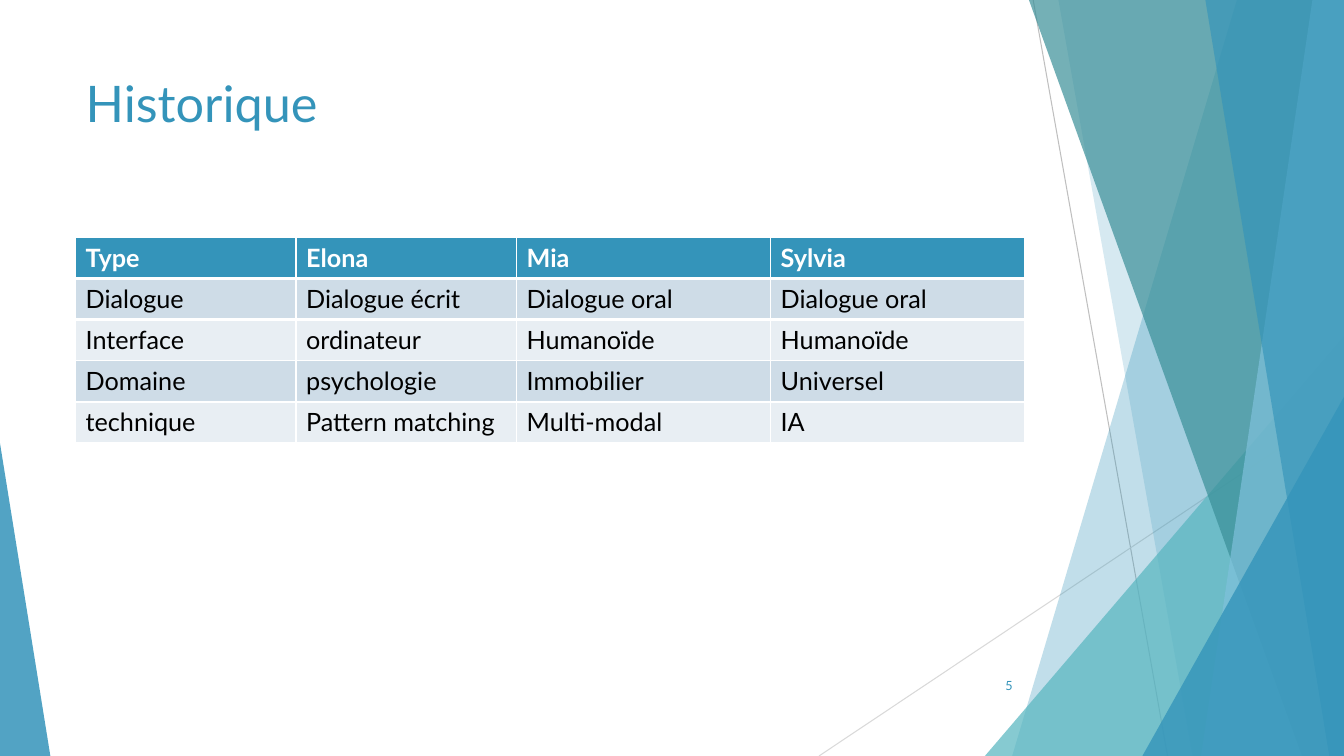
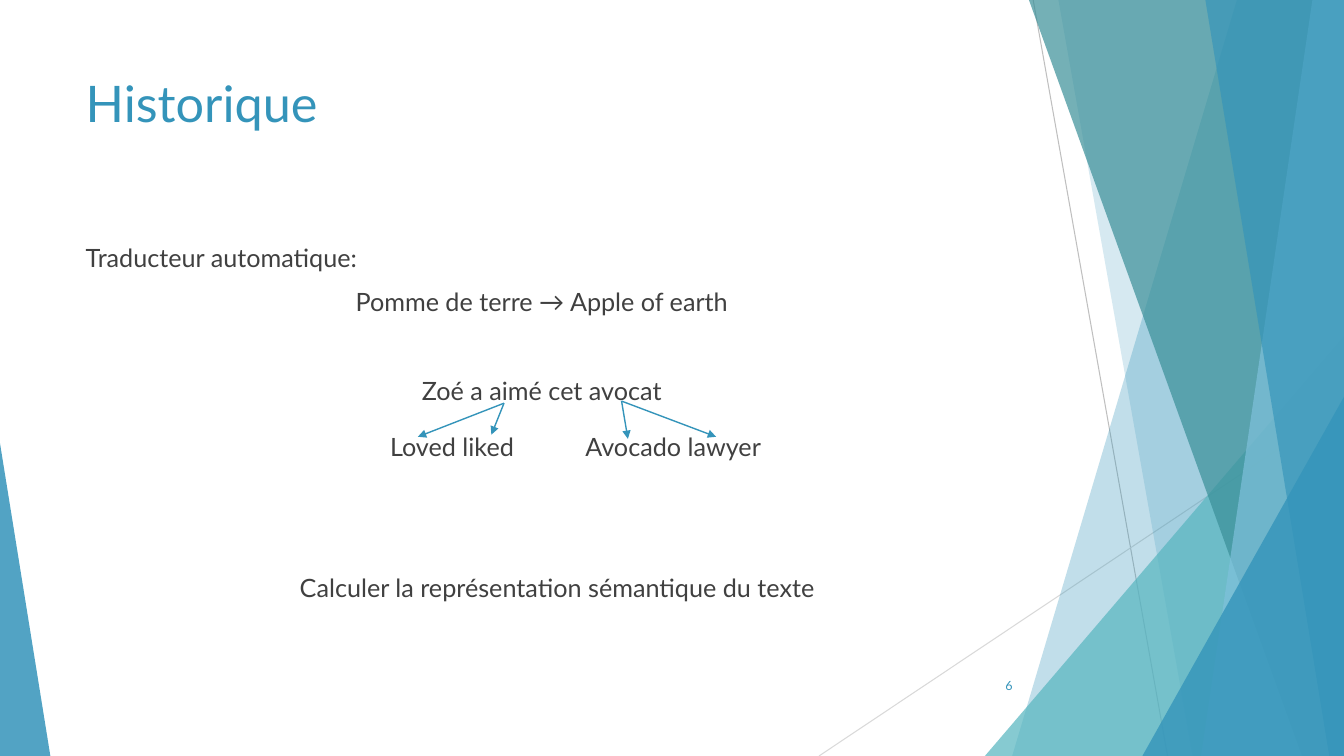
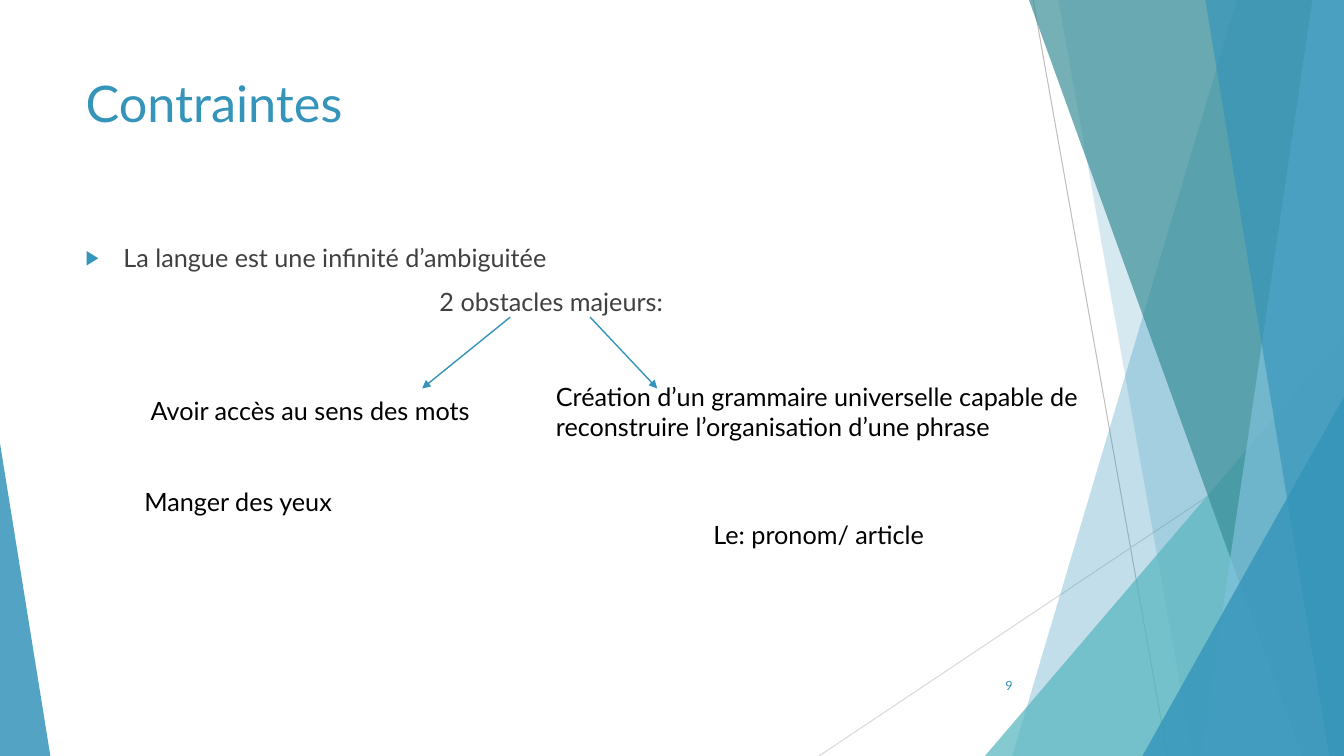
from lxml.etree import SubElement
from pptx import Presentation
from pptx.dml.color import RGBColor
from pptx.enum.shapes import MSO_CONNECTOR, MSO_SHAPE
from pptx.enum.text import MSO_ANCHOR, MSO_AUTO_SIZE, PP_ALIGN
from pptx.oxml.ns import qn
from pptx.util import Inches, Pt

BLUE, TEAL, SEA, SKY = "3494BA", "58B6C0", "3A8F98", "7FC1DB"
GREY, BLACK, WHITE = "404040", "000000", "FFFFFF"
FONT = "Lato"
rgb = RGBColor.from_string

prs = Presentation()
prs.slide_width, prs.slide_height = Inches(40 / 3), Inches(7.5)
COLS, ROWS = 640, 360  # square grid over the whole slide
u = prs.slide_width // COLS


def write(tf, text, size=18, color=GREY, bold=False, align=PP_ALIGN.LEFT,
          before=0, indent=0, bullet=False):
    """Add one formatted paragraph to a text frame; indent is in grid columns."""
    tf.word_wrap = True
    p = tf.add_paragraph() if tf.text else tf.paragraphs[0]
    p.alignment, p.space_before = align, Pt(before)
    r = p.add_run()
    r.text = text
    r.font.name, r.font.size, r.font.bold = FONT, Pt(size), bold
    r.font.color.rgb = rgb(color)
    pPr = p._p.get_or_add_pPr()
    pPr.set("marL", str(indent * u))
    pPr.set("indent", str(-indent * u if bullet else 0))
    if bullet:
        SubElement(SubElement(pPr, qn("a:buClr")), qn("a:srgbClr"), val=BLUE)
        SubElement(pPr, qn("a:buSzPct"), val="80000")
        SubElement(pPr, qn("a:buChar"), char="▶")
    else:
        SubElement(pPr, qn("a:buNone"))


def line(shapes, x1, y1, x2, y2, color=BLUE, width=1, arrow=True):
    cxn = shapes.add_connector(MSO_CONNECTOR.STRAIGHT, x1 * u, y1 * u, x2 * u, y2 * u)
    cxn.line.color.rgb, cxn.line.width = rgb(color), Pt(width)
    spPr = cxn.element.spPr
    if arrow:
        SubElement(spPr.find(qn("a:ln")), qn("a:tailEnd"), type="triangle")
    SubElement(spPr, qn("a:effectLst"))


# Slides with title and number
slides = []
for title, number, layout in (("Historique", "5", 5), ("Historique", "6", 1),
                              ("Contraintes", "9", 1)):
    s = prs.slides.add_slide(prs.slide_layouts[layout])
    sp = s.shapes.title
    sp.left, sp.top, sp.width, sp.height = 36 * u, 32 * u, 451 * u, 69 * u
    sp.text_frame.auto_size = MSO_AUTO_SIZE.NONE
    sp.text_frame.vertical_anchor = MSO_ANCHOR.TOP
    write(sp.text_frame, title, size=36, color=BLUE)
    tf = s.shapes.add_textbox(451 * u, 317 * u, 36 * u, 19 * u).text_frame
    tf.vertical_anchor = MSO_ANCHOR.MIDDLE
    write(tf, number, size=9, color=BLUE, align=PP_ALIGN.RIGHT)
    slides.append(s)
table_slide, translation_slide, limits_slide = slides

# Decoration, drawn once and moved to the master
group = table_slide.shapes.add_group_shape()
line(group.shapes, 492, 0, 556, ROWS, "BFBFBF", 0.75, arrow=False)
line(group.shapes, COLS, 193, 390, ROWS, "D9D9D9", 0.75, arrow=False)
# Bands: left edge at top and bottom. Triangles: left, top, width, apex.
for place, color, alpha in (
    ((589, 482), BLUE, 30),
    ((504, 568), BLUE, 20),
    ((469, 160, 171, 1), TEAL, 72),
    ((490, 620), SEA, 70),
    ((625, 572), SKY, 70),
    ((574, 633), BLUE, 65),
    ((544, 189, 96, 1), BLUE, 80),
    ((0, 211, 24, 0), BLUE, 85),
):
    if len(place) == 2:
        top_x, bottom_x = place
        outline = group.shapes.build_freeform(top_x, 0, scale=u)
        outline.add_line_segments([(COLS, 0), (COLS, ROWS), (bottom_x, ROWS)])
        sp = outline.convert_to_shape()
    else:
        x, y, w, apex = place
        sp = group.shapes.add_shape(MSO_SHAPE.ISOSCELES_TRIANGLE,
                                    x * u, y * u, w * u, (ROWS - y) * u)
        sp.adjustments[0] = apex
    sp.shadow.inherit = False
    sp.line.fill.background()
    sp.fill.solid()
    sp.fill.fore_color.rgb = rgb(color)
    SubElement(sp.element.spPr.find(".//" + qn("a:srgbClr")), qn("a:alpha"),
               val=str(alpha * 1000))
for i, props in enumerate(group.element.iter(qn("p:cNvPr")), 100):
    props.set("id", str(i))
prs.slide_master.shapes.element.insert(2, group.element)

# Comparison table
rows = (
    ("Type", "Elona", "Mia", "Sylvia"),
    ("Dialogue", "Dialogue écrit", "Dialogue oral", "Dialogue oral"),
    ("Interface", "ordinateur", "Humanoïde", "Humanoïde"),
    ("Domaine", "psychologie", "Immobilier", "Universel"),
    ("technique", "Pattern matching", "Multi-modal", "IA"),
)
table = table_slide.shapes.add_table(5, 4, 36 * u, 113 * u, 452 * u, 98 * u).table
for column, width in zip(table.columns, (105, 105, 121, 121)):
    column.width = width * u
for i, row in enumerate(rows):
    for j, text in enumerate(row):
        cell = table.cell(i, j)
        if i < 2:  # thick rule between header and body
            tcPr = cell._tc.get_or_add_tcPr()
            rule = SubElement(tcPr, qn("a:lnT" if i else "a:lnB"), w=str(Pt(3)))
            SubElement(SubElement(rule, qn("a:solidFill")), qn("a:srgbClr"), val=WHITE)
        cell.fill.solid()
        cell.fill.fore_color.rgb = rgb(BLUE if i == 0 else ("E8EEF3", "CEDCE7")[i % 2])
        write(cell.text_frame, text, color=BLACK if i else WHITE, bold=i == 0)

# Body lists
center = PP_ALIGN.CENTER
for s, width, height, paragraphs in (
    (translation_slide, 444, 90, (
        ("Traducteur automatique:", {}),
        ("Pomme de terre → Apple of earth", {"align": center}),
        ("Zoé a aimé cet avocat", {"align": center, "before": 42}),
    )),
    (limits_slide, 429, 64, (
        ("La langue est une infinité d’ambiguitée", {"indent": 18, "bullet": True}),
        ("2 obstacles majeurs:", {"align": center, "indent": 24}),
    )),
):
    sp = s.placeholders[1]
    sp.left, sp.top, sp.width, sp.height = 36 * u, 113 * u, width * u, height * u
    sp.text_frame.auto_size = MSO_AUTO_SIZE.NONE
    for text, fmt in paragraphs:
        write(sp.text_frame, text, **{"before": 10, **fmt})

# Free texts
for s, x, y, w, h, color, text in (
    (translation_slide, 274, 203, 95, 31, GREY, "Avocado lawyer"),
    (translation_slide, 181, 203, 80, 31, GREY, "Loved liked"),
    (translation_slide, 138, 270, 298, 30, GREY,
     "Calculer la représentation sémantique du texte"),
    (limits_slide, 260, 179, 280, 34, BLACK,
     "Création d’un grammaire universelle capable de "
     "reconstruire l’organisation d’une phrase"),
    (limits_slide, 67, 186, 173, 19, BLACK, "Avoir accès au sens des mots"),
    (limits_slide, 335, 245, 132, 19, BLACK, "Le: pronom/ article"),
    (limits_slide, 64, 229, 175, 19, BLACK, "Manger des yeux"),
):
    tf = s.shapes.add_textbox(x * u, y * u, w * u, h * u).text_frame
    write(tf, text, color=color)

# Arrows from a word to its meanings
for s, start, ends in (
    (translation_slide, (240, 192), ((199, 208), (234, 207))),
    (translation_slide, (296, 191), ((299, 209), (341, 208))),
    (limits_slide, (243, 151), ((201, 185),)),
    (limits_slide, (281, 151), ((313, 185),)),
):
    for end in ends:
        line(s.shapes, *start, *end)

prs.save("out.pptx")
